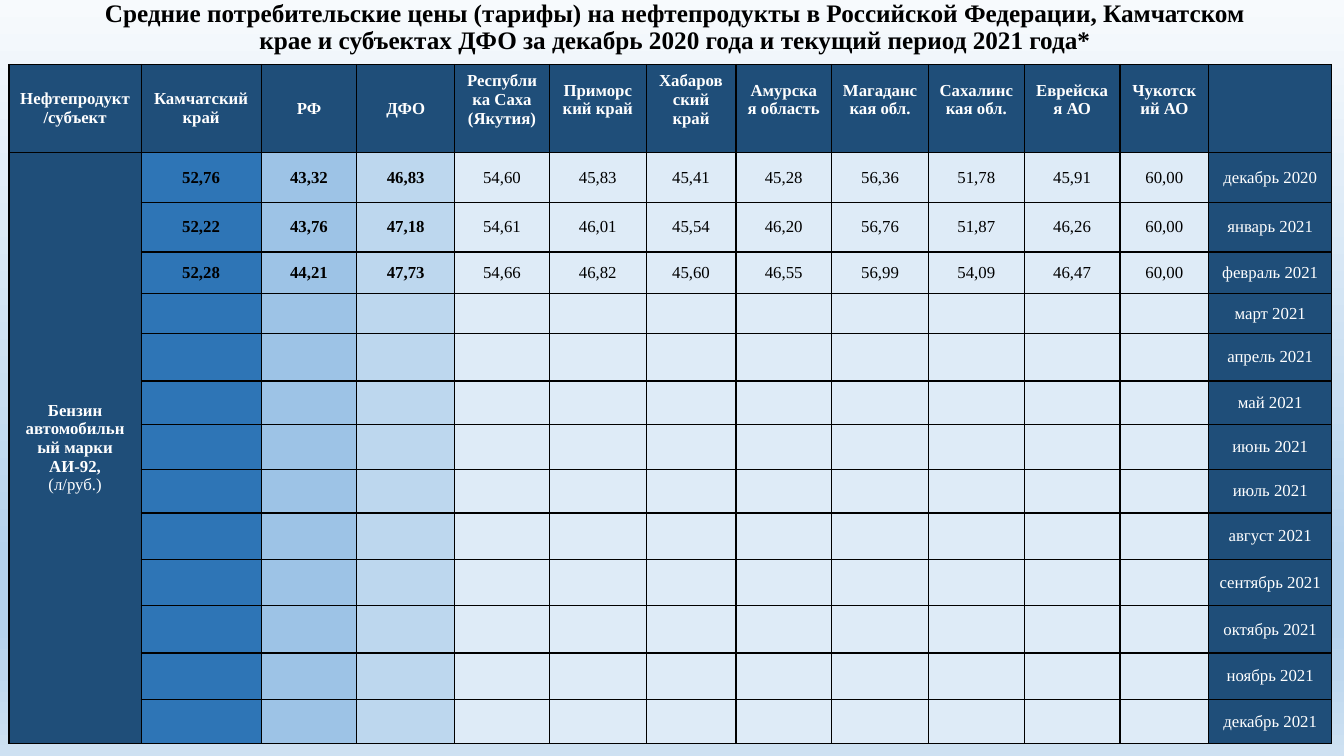
from lxml.etree import SubElement
from pptx import Presentation
from pptx.dml.color import RGBColor
from pptx.enum.text import MSO_ANCHOR as Anchor, PP_ALIGN as Align
from pptx.oxml.ns import qn
from pptx.util import Inches, Pt

FONT = "Times New Roman"
COLORS = {
    "black": "000000", "white": "FFFFFF", "navy": "1F4E79",
    "blue": "2E75B6", "sky": "9DC3E6", "light": "BDD7EE", "pale": "DEEBF7",
}
BACKGROUND = [(0, "F7FAFD"), (74, "B5D2EC"), (83, "B5D2EC"), (100, "CEE1F2")]
TITLE = ("Средние потребительские цены (тарифы) на нефтепродукты в Российской "
         "Федерации, Камчатском крае и субъектах ДФО за декабрь 2020 года "
         "и текущий период 2021 года*")
HEADERS = ["Нефтепродукт/субъект", "Камчатский край", "РФ", "ДФО",
           "Республика Саха (Якутия)", "Приморский край", "Хабаровский край",
           "Амурская область", "Магаданская обл.", "Сахалинская обл.",
           "Еврейская АО", "Чукотский АО", ""]
PERIODS = ["декабрь 2020", "январь 2021", "февраль 2021", "март 2021",
           "апрель 2021", "май 2021", "июнь 2021", "июль 2021", "август 2021",
           "сентябрь 2021", "октябрь 2021", "ноябрь 2021", "декабрь 2021"]
PRICES = [
    "52,76 43,32 46,83 54,60 45,83 45,41 45,28 56,36 51,78 45,91 60,00".split(),
    "52,22 43,76 47,18 54,61 46,01 45,54 46,20 56,76 51,87 46,26 60,00".split(),
    "52,28 44,21 47,73 54,66 46,82 45,60 46,55 56,99 54,09 46,47 60,00".split(),
]
COL_WIDTHS = [1.31, 1.19, 0.95, 0.97, 0.94, 0.96, 0.89, 0.95, 0.96, 0.95, 0.95, 0.88, 1.22]
ROW_HEIGHTS = [0.76, 0.5, 0.49, 0.41, 0.4, 0.47, 0.43, 0.45, 0.43, 0.46, 0.46, 0.47, 0.46, 0.44]
PRICE_FILLS = ["blue", "sky", "light"] + ["pale"] * 8
BOLD_PRICES = 3
FIRST_REGION = 4


def rgb(name):
    return RGBColor.from_string(COLORS[name])


def write(p, text, size=12, color="black", bold=False, spacing=None):
    p.alignment = Align.CENTER
    p.line_spacing = spacing
    p.font.size = Pt(size)
    if text:
        r = p.add_run()
        r.text = text
        r.font.name = FONT
        r.font.size = Pt(size)
        r.font.bold = bold
        r.font.color.rgb = rgb(color)


def set_background(s):
    fill = s.background.fill
    fill.gradient()
    fill.gradient_angle = 270
    stops = s.background._cSld.find(".//" + qn("a:gsLst"))
    for stop in list(stops):
        stops.remove(stop)
    for position, color in BACKGROUND:
        stop = SubElement(stops, qn("a:gs"), pos=str(position * 1000))
        SubElement(stop, qn("a:srgbClr"), val=color)


def add_title(s):
    tf = s.shapes.add_textbox(Inches(0.92), Inches(0), Inches(11.55), Inches(0.55)).text_frame
    tf.word_wrap = True
    tf.vertical_anchor = Anchor.MIDDLE
    write(tf.paragraphs[0], TITLE, size=18, bold=True, spacing=0.9)


def add_borders(cell):
    tc_pr = cell._tc.get_or_add_tcPr()
    for side in ("lnL", "lnR", "lnT", "lnB"):
        line = SubElement(tc_pr, qn("a:" + side), w=str(Pt(1)))
        solid = SubElement(line, qn("a:solidFill"))
        SubElement(solid, qn("a:srgbClr"), val=COLORS["black"])


def style_cell(cell, fill, text="", **text_format):
    add_borders(cell)
    cell.fill.solid()
    cell.fill.fore_color.rgb = rgb(fill)
    cell.vertical_anchor = Anchor.MIDDLE
    write(cell.text_frame.paragraphs[0], text, **text_format)


def add_price_table(s):
    rows, cols = len(ROW_HEIGHTS), len(COL_WIDTHS)
    table = s.shapes.add_table(rows, cols, Inches(0.09), Inches(0.64),
                               Inches(13.1), Inches(6.76)).table
    for column, width in zip(table.columns, COL_WIDTHS):
        column.width = Inches(width)
    for row, height in zip(table.rows, ROW_HEIGHTS):
        row.height = Inches(height)

    for col, header in enumerate(HEADERS):
        cell = table.cell(0, col)
        style_cell(cell, "navy", header, color="white", bold=True)
        if header and col >= FIRST_REGION:
            cell.margin_bottom = Inches(0.22)

    for row, period in enumerate(PERIODS, 1):
        prices = PRICES[row - 1] if row <= len(PRICES) else [""] * len(PRICE_FILLS)
        for col, (price, fill) in enumerate(zip(prices, PRICE_FILLS), 1):
            style_cell(table.cell(row, col), fill, price, bold=col <= BOLD_PRICES)
        style_cell(table.cell(row, cols - 1), "navy", period, color="white")

    product = table.cell(1, 0)
    for row in range(2, rows):
        style_cell(table.cell(row, 0), "navy")
    product.merge(table.cell(rows - 1, 0))
    style_cell(product, "navy", "Бензин автомобильный марки", color="white", bold=True)
    tf = product.text_frame
    write(tf.add_paragraph(), "АИ-92,", color="white", bold=True)
    write(tf.add_paragraph(), "(л/руб.)", color="white")


def main():
    prs = Presentation()
    prs.slide_width = Inches(13.33)
    prs.slide_height = Inches(7.5)
    s = prs.slides.add_slide(prs.slide_layouts[6])
    set_background(s)
    add_title(s)
    add_price_table(s)
    prs.save("out.pptx")


if __name__ == "__main__":
    main()
